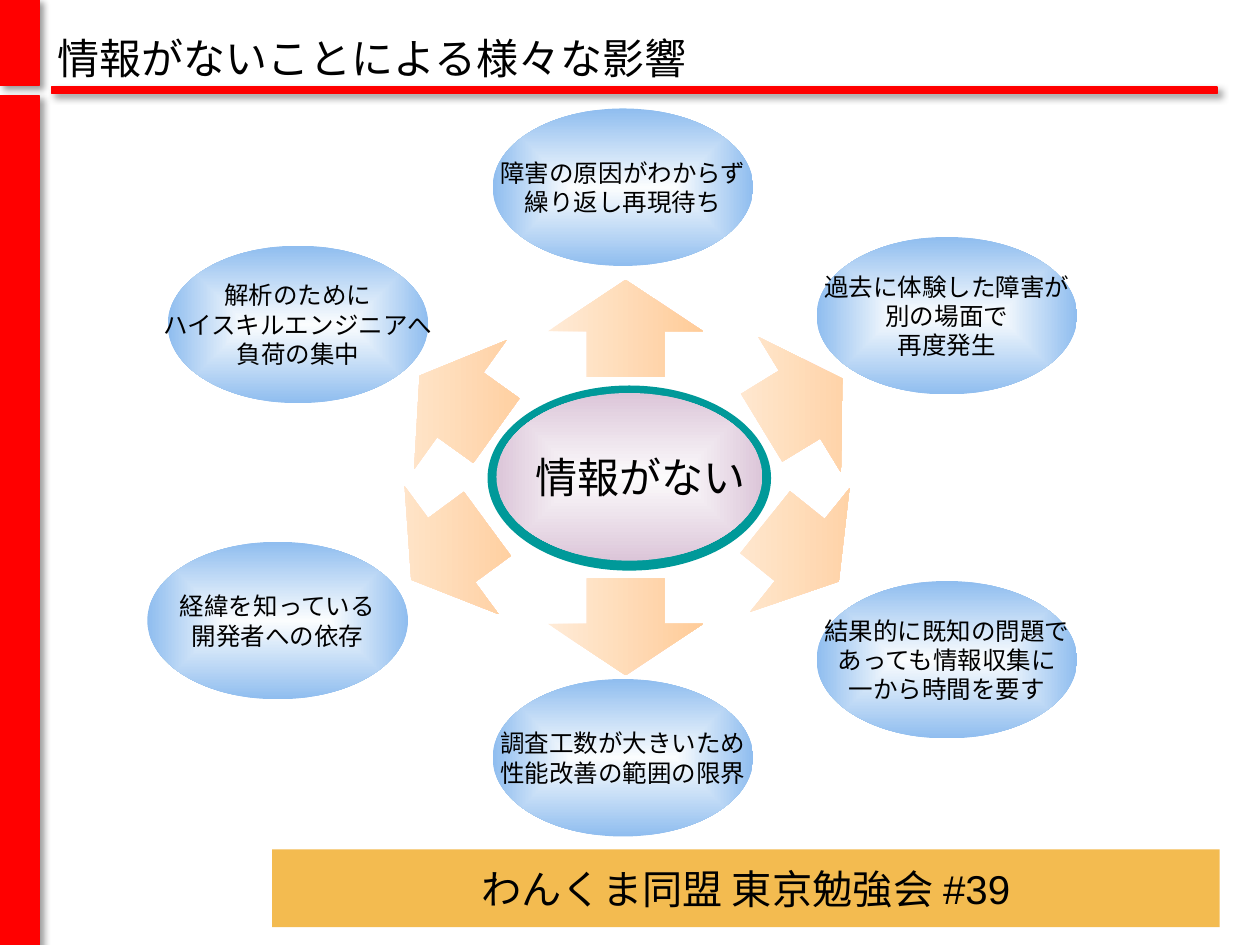
import pptx
import pptx.util
import pptx.dml.color
import pptx.enum.shapes
import pptx.enum.text
import pptx.oxml
import pptx.oxml.ns
import lxml.etree

Pt = pptx.util.Pt
KIND = pptx.enum.shapes.MSO_SHAPE
ALIGN = pptx.enum.text.PP_ALIGN
MID = pptx.enum.text.MSO_ANCHOR.MIDDLE
NS = pptx.oxml.ns.nsdecls("a")
SANS = "Noto Sans CJK JP"

COLORS = {
    "red": "FF0000", "gold": "F3BB50", "teal": "009999", "text": "000000",
    "peach": "FFCC99", "cream": "FFEBD7",
    "pale": "FCFBFC", "mauve": "DCC6D9",
    "ice": "FBFDFE", "blue": "8FBDEF",
}

BARS = [(0, 0, 22.3, 49), (0, 54.7, 22.3, 486.7), (29.5, 49.7, 666, 3.6)]

# Left, top and lines of each effect
BUBBLES = [
    (281.5, 62, "障害の原因がわからず\n繰り返し再現待ち"),
    (95.8, 140.4, "解析のために\nハイスキルエンジニアへ\n負荷の集中"),
    (84.2, 309.6, "経緯を知っている\n開発者への依存"),
    (466.6, 135.4, "過去に体験した障害が\n別の場面で\n再度発生"),
    (281.5, 388, "調査工数が大きいため\n性能改善の範囲の限界"),
    (466.6, 332, "結果的に既知の問題で\nあっても情報収集に\n一から時間を要す"),
]

# Left, top, width, height and heading, clockwise from the right
ARROWS = [
    (329.8, 143.3, 55.4, 88.6, 270),
    (329.8, 313.9, 55.4, 88.6, 90),
    (229.7, 270, 54, 90.7, 143.7),
    (431.3, 270, 54, 90.7, 38.8),
    (234.7, 185, 54, 90.7, 215.6),
    (431.3, 185, 54, 90.7, 328.6),
]


def color(name):
    return pptx.dml.color.RGBColor.from_string(COLORS[name])


def add_shape(shapes, kind, box, fill=None):
    """Add a flat shape without line or shadow."""
    shape = shapes.add_shape(kind, *map(Pt, box))
    shape.shadow.inherit = False
    shape.line.fill.background()
    if fill:
        shape.fill.solid()
        shape.fill.fore_color.rgb = color(fill)
    return shape


def set_grad(shape, first, last, way):
    """Fill with two colours that stay level when the shape turns."""
    stops = "".join(
        f'<a:gs pos="{pos}"><a:srgbClr val="{COLORS[name]}"/></a:gs>'
        for pos, name in ((0, first), (100000, last)))
    grad = pptx.oxml.parse_xml(
        f'<a:gradFill {NS} rotWithShape="0"><a:gsLst>{stops}</a:gsLst>'
        f'{way}</a:gradFill>')
    shape.fill.background()
    props = shape.element.spPr
    props.replace(props.find(pptx.oxml.ns.qn("a:noFill")), grad)


def set_glow(shape, inner, outer):
    """Fill from the centre outwards."""
    mid = 'l="50000" t="50000" r="50000" b="50000"'
    set_grad(shape, inner, outer,
             f'<a:path path="shape"><a:fillToRect {mid}/></a:path>')


def set_text(shape, text, size, font=SANS, align=ALIGN.CENTER):
    frame = shape.text_frame
    frame.text = text
    frame.word_wrap = False
    frame.vertical_anchor = MID
    for para in frame.paragraphs:
        para.alignment = align
        for run in para.runs:
            run.font.size = Pt(size)
            run.font.name = font
            run.font.color.rgb = color("text")
            if font == SANS:
                east = lxml.etree.SubElement(
                    run.font._element, pptx.oxml.ns.qn("a:ea"))
                east.set("typeface", font)


def add_bar(shapes, box):
    bar = add_shape(shapes, KIND.RECTANGLE, box, "red")
    bar.line.color.rgb = color("red")
    bar.line.width = Pt(0.75)
    effects = bar.element.spPr.find(pptx.oxml.ns.qn("a:effectLst"))
    effects.append(pptx.oxml.parse_xml(
        f'<a:outerShdw {NS} blurRad="{Pt(4)}" dist="{Pt(3)}" dir="2700000" '
        'algn="tl" rotWithShape="0"><a:srgbClr val="000000">'
        '<a:alpha val="40000"/></a:srgbClr></a:outerShdw>'))


def add_core(shapes):
    group = shapes.add_group_shape()
    add_shape(group.shapes, KIND.OVAL, (278.6, 220.3, 162, 105.8), "teal")
    core = add_shape(group.shapes, KIND.OVAL, (283.7, 224.6, 151.9, 95.8))
    set_glow(core, "pale", "mauve")
    set_text(core, "情報がない", 24, align=ALIGN.LEFT)
    frame = core.text_frame
    frame.margin_left = frame.margin_right = 0
    frame.margin_top = frame.margin_bottom = 0


def add_arrow(shapes, box, turn):
    arrow = add_shape(shapes, KIND.RIGHT_ARROW, box)
    arrow.rotation = turn
    arrow.adjustments[0] = 0.5
    arrow.adjustments[1] = 0.53
    set_grad(arrow, "cream", "peach", '<a:lin ang="0" scaled="0"/>')


def add_bubble(shapes, left, top, text):
    bubble = add_shape(shapes, KIND.OVAL, (left, top, 149, 90))
    set_glow(bubble, "ice", "blue")
    set_text(bubble, text, 14)


def main():
    deck = pptx.Presentation()
    deck.slide_width, deck.slide_height = Pt(720), Pt(540)
    shapes = deck.slides.add_slide(deck.slide_layouts[6]).shapes

    # Footer and red frame
    foot = add_shape(shapes, KIND.RECTANGLE, (155.5, 485.3, 541.4, 44.6), "gold")
    set_text(foot, "わんくま同盟 東京勉強会 #39", 23, "Arial")
    for box in BARS:
        add_bar(shapes, box)

    # Cause in the middle, effects around it
    add_core(shapes)
    for *box, turn in ARROWS:
        add_arrow(shapes, box, turn)
    for bubble in BUBBLES:
        add_bubble(shapes, *bubble)

    # Title
    title = shapes.add_textbox(*map(Pt, (25.9, 15.8, 583.9, 34.6)))
    set_text(title, "情報がないことによる様々な影響", 24, align=ALIGN.LEFT)

    deck.save("out.pptx")


if __name__ == "__main__":
    main()
